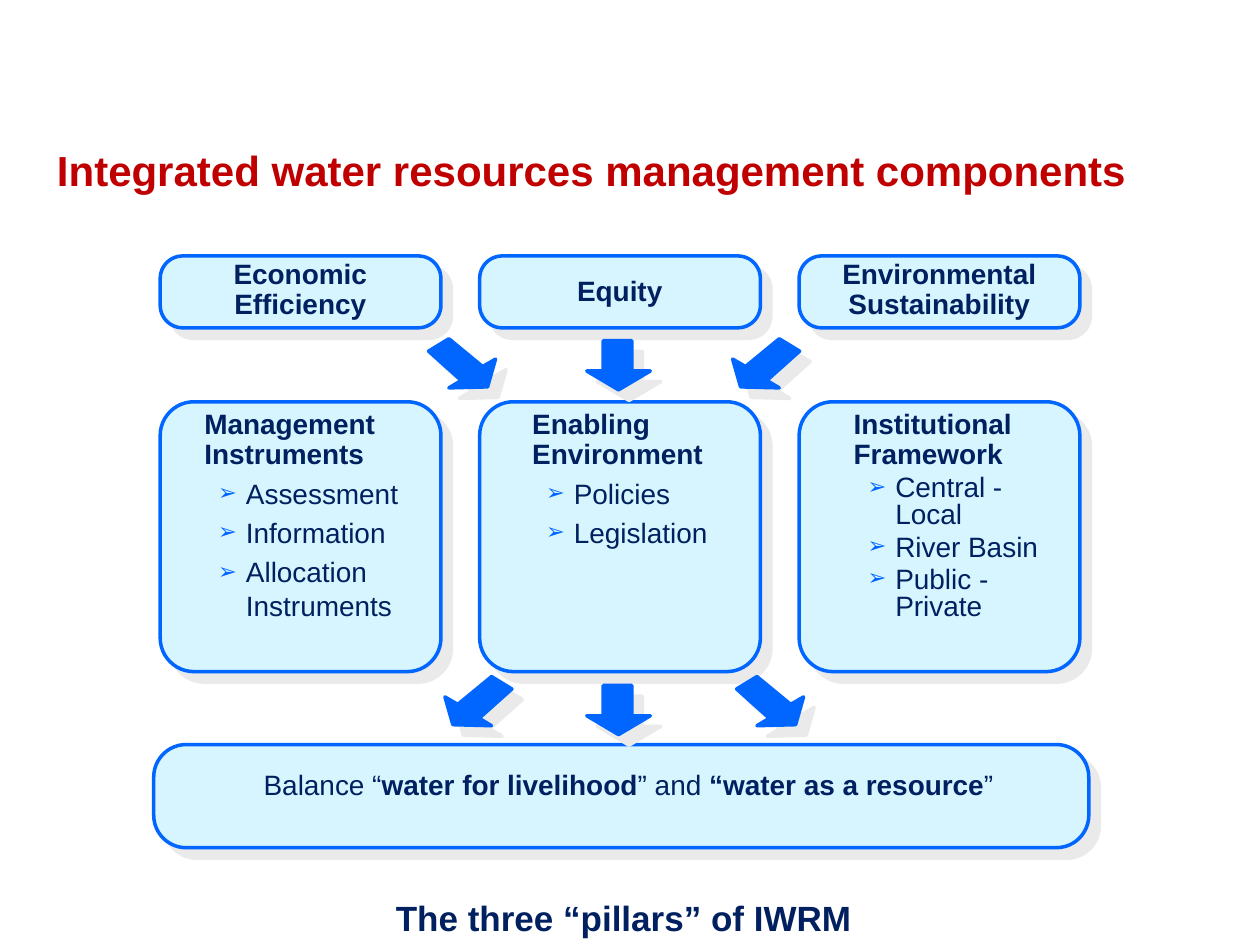
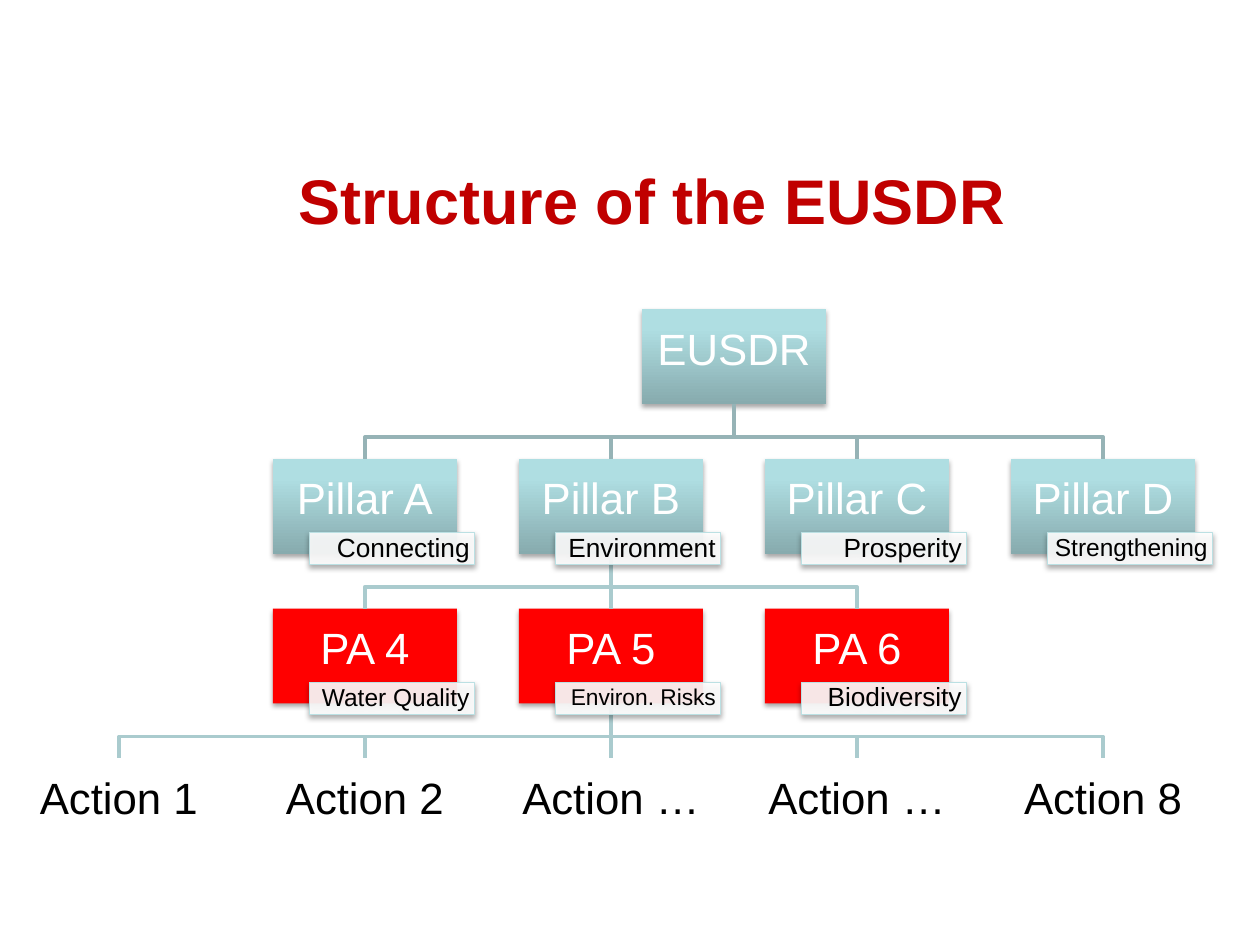
from dataclasses import dataclass

from copy import deepcopy
from lxml import etree
from pptx import Presentation
from pptx.dml.color import RGBColor
from pptx.enum import shapes, text as t
from pptx.oxml.ns import qn
from pptx.util import Cm, Pt


@dataclass(frozen=True)
class Theme:
    font: str = "Arial"
    title: str = "C00000"
    navy: str = "002060"
    blue: str = "0066FF"
    pale: str = "D7F5FF"
    white: str = "FFFFFF"
    black: str = "000000"
    red: str = "FF0000"
    teal_edge: str = "BBE0E3"
    branch_top: str = "96B3B6"
    branch_low: str = "AACBCE"
    teal: tuple = ((0, "87ABAE"), (0.8, "AFDEE2"), (1, "AFE0E4"))
    # colour, opacity %, blur pt, distance pt, direction in degrees
    grey_shadow: tuple = ("EAEAEA", 100, 0, 8.5, 45)
    soft_shadow: tuple = ("000000", 35, 3.1, 1.8, 90)
    body_size: int = 16
    closing_size: int = 20
    node_size: int = 25
    line_width: int = 2


THEME = Theme()
LEFT, CENTER, RIGHT = t.PP_ALIGN.LEFT, t.PP_ALIGN.CENTER, t.PP_ALIGN.RIGHT
TOP, MIDDLE = t.MSO_ANCHOR.TOP, t.MSO_ANCHOR.MIDDLE
RECT, ROUNDED = shapes.MSO_SHAPE.RECTANGLE, shapes.MSO_SHAPE.ROUNDED_RECTANGLE

DOWN_ARROW = [(0.64, 0.99), (0, 0.61), (0.33, 0.61), (0.33, 0),
              (0.91, 0), (0.91, 0.61), (1.28, 0.61)]
RIGHT_ARROW = [(1.19, 0.97), (1.35, 0.41), (1.09, 0.56), (0.41, 0),
               (0, 0.25), (0.66, 0.84), (0.41, 0.99)]
LEFT_ARROW = [(1.35 - x, y) for x, y in RIGHT_ARROW]


def write(para, content, size=THEME.body_size, color=THEME.navy, bold=False,
          align=LEFT, spacing=None, before=None, bullet=None):
    """Fill a paragraph from a string or from (text, bold) pairs."""
    para.alignment = align
    para.line_spacing = spacing
    if before is not None:
        para.space_before = Pt(before)
    if bullet:
        add_bullet(para, bullet)
    spans = [(content, bold)] if isinstance(content, str) else content
    for words, heavy in spans:
        for index, line in enumerate(words.split("\n")):
            if index:
                para.add_line_break()
                props = etree.SubElement(para._p[-1], qn("a:rPr"))
                props.set("sz", str(size * 100))
            span = para.add_run()
            span.text = line
            span.font.name = THEME.font
            span.font.size = Pt(size)
            span.font.bold = heavy
            span.font.color.rgb = RGBColor.from_string(color)


def add_bullet(para, mark):
    props = para._p.get_or_add_pPr()
    props.set("marL", str(Cm(0.84)))
    props.set("indent", str(-Cm(0.56)))
    tint = etree.SubElement(props, qn("a:buClr"))
    etree.SubElement(tint, qn("a:srgbClr")).set("val", THEME.blue)
    etree.SubElement(props, qn("a:buSzPct")).set("val", "80000")
    etree.SubElement(props, qn("a:buFont")).set("typeface", THEME.font)
    etree.SubElement(props, qn("a:buChar")).set("char", mark)


def set_frame(frame, insets, anchor, wrap):
    frame.word_wrap = wrap
    frame.vertical_anchor = anchor
    (frame.margin_left, frame.margin_top,
     frame.margin_right, frame.margin_bottom) = (Cm(inset) for inset in insets)


def set_shadow(shape, shadow):
    shape.shadow.inherit = False
    color, opacity, blur, distance, angle = shadow
    effects = shape._element.spPr.find(qn("a:effectLst"))
    outer = etree.SubElement(effects, qn("a:outerShdw"), blurRad=str(Pt(blur)),
                             dist=str(Pt(distance)), dir=str(angle * 60000),
                             algn="ctr", rotWithShape="0")
    tint = etree.SubElement(outer, qn("a:srgbClr"), val=color)
    etree.SubElement(tint, qn("a:alpha"), val=str(opacity * 1000))


def set_fill(shape, fill, opacity=100):
    """Fill with one colour, or upwards through (position, colour) stops."""
    if isinstance(fill, str):
        shape.fill.solid()
        shape.fill.fore_color.rgb = RGBColor.from_string(fill)
        if opacity < 100:
            tint = shape._element.spPr.find(qn("a:solidFill"))[0]
            etree.SubElement(tint, qn("a:alpha"), val=str(opacity * 1000))
        return
    shape.fill.gradient()
    shape.fill.gradient_angle = 90
    stop_list = shape._element.spPr.find(".//" + qn("a:gsLst"))
    while len(stop_list) < len(fill):
        stop_list.append(deepcopy(stop_list[0]))
    for stop, (position, color) in zip(shape.fill.gradient_stops, fill):
        stop.position = position
        stop.color.rgb = RGBColor.from_string(color)


def set_line(shape, color, width=THEME.line_width):
    if color is None:
        shape.line.fill.background()
        return
    shape.line.color.rgb = RGBColor.from_string(color)
    shape.line.width = Pt(width)


class Painter:
    """Draws on the current page; all lengths are centimetres."""

    def __init__(self):
        self.deck = Presentation()
        self.deck.slide_width, self.deck.slide_height = Cm(25.4), Cm(19.05)
        self.page = None

    def new_page(self):
        self.page = self.deck.slides.add_slide(self.deck.slide_layouts[6])

    def text_box(self, at, paragraphs, insets=(0.13, 0.05, 0.13, 0.05),
                 anchor=TOP, wrap=False):
        """Add text given as (content, format) pairs, one a paragraph."""
        box = self.page.shapes.add_textbox(*map(Cm, at))
        frame = box.text_frame
        set_frame(frame, insets, anchor, wrap)
        for index, (content, style) in enumerate(paragraphs):
            para = frame.add_paragraph() if index else frame.paragraphs[0]
            write(para, content, **style)
        return box

    def title(self, at, content, **style):
        style = dict(color=THEME.title, bold=True, **style)
        self.text_box(at, [(content, style)], (0.25, 0.13, 0.25, 0.13), MIDDLE, True)

    def shape(self, kind, at, fill, line, shadow, width=THEME.line_width, opacity=100):
        shape = self.page.shapes.add_shape(kind, *map(Cm, at))
        set_fill(shape, fill, opacity)
        set_line(shape, line, width)
        set_shadow(shape, shadow)
        return shape

    def panel(self, at, rounding):
        panel = self.shape(ROUNDED, at, THEME.pale, THEME.blue, THEME.grey_shadow)
        panel.adjustments[0] = rounding

    def outline(self, points, close):
        points = [(Cm(x), Cm(y)) for x, y in points]
        builder = self.page.shapes.build_freeform(*points[0], scale=1.0)
        builder.add_line_segments(points[1:], close=close)
        return builder.convert_to_shape()

    def block_arrow(self, left, top, points):
        arrow = self.outline([(left + x, top + y) for x, y in points], True)
        set_fill(arrow, THEME.blue)
        set_line(arrow, THEME.blue)
        set_shadow(arrow, THEME.grey_shadow)

    def branch(self, parent, child, color):
        """Join a parent's bottom to a child's top, with a bend if needed."""
        start = (parent.left + parent.width // 2, parent.top + parent.height)
        end = (child.left + child.width // 2, child.top)
        if start[0] == end[0]:
            link = self.page.shapes.add_connector(
                shapes.MSO_CONNECTOR.STRAIGHT, *start, *end)
            link.begin_connect(parent, 2)
            link.end_connect(child, 0)
            etree.SubElement(link._element.spPr, qn("a:effectLst"))
        else:
            (x1, y1), (x2, y2) = [(x / Cm(1), y / Cm(1)) for x, y in (start, end)]
            bend = y1 + 0.67
            link = self.outline([(x1, y1), (x1, bend), (x2, bend), (x2, y2)], False)
            link.fill.background()
            link.shadow.inherit = False
        set_line(link, color)


class Tree:
    """Organisation chart on a grid of columns and levels."""
    LEFT, TOP, COLUMN, LEVEL, WIDTH, HEIGHT = 0.54, 6.23, 4.96, 3.02, 3.71, 1.91
    INSETS = (0.05, 0.05, 0.05, 0.27)

    def __init__(self, painter):
        self.painter = painter

    def place(self, column, level):
        return self.LEFT + column * self.COLUMN, self.TOP + level * self.LEVEL

    def node(self, column, level, label, fill=None):
        at = (*self.place(column, level), self.WIDTH, self.HEIGHT)
        style = dict(size=THEME.node_size, align=CENTER, spacing=0.9)
        if fill is None:
            return self.painter.text_box(
                at, [(label, dict(style, color=THEME.black))], self.INSETS, MIDDLE, True)
        node = self.painter.shape(RECT, at, fill, None, THEME.soft_shadow)
        set_frame(node.text_frame, self.INSETS, MIDDLE, True)
        write(node.text_frame.paragraphs[0], label, color=THEME.white, **style)
        return node

    def tag(self, column, level, label, size):
        left, top = self.place(column, level)
        tag = self.painter.shape(RECT, (left + 0.74, top + 1.49, 3.33, 0.64), THEME.white,
                                 THEME.teal_edge, THEME.soft_shadow, 0.75, 90)
        set_frame(tag.text_frame, (0.1, 0.03, 0.1, 0.03), MIDDLE, True)
        write(tag.text_frame.paragraphs[0], label, size=size, color=THEME.black,
              align=RIGHT, spacing=0.9)


def components_page(painter):
    painter.new_page()
    left, pitch, width = 3.23, 6.44, 5.66
    goals = [("Economic\nEfficiency", 5.2), ("Equity", 5.54),
             ("Environmental\nSustainability", 5.2)]
    # heading, items, left inset of the text, line spacing of the items
    pillars = [
        ("Management\nInstruments",
         ["Assessment", "Information", "Allocation\nInstruments"], 0.62, None),
        ("Enabling\nEnvironment", ["Policies", "Legislation"], 0.79, None),
        ("Institutional\nFramework",
         ["Central -\nLocal", "River Basin", "Public -\nPrivate"], 0.83, 0.8),
    ]
    heading = dict(bold=True, spacing=0.9)
    for column, (goal, pillar) in enumerate(zip(goals, pillars)):
        x = left + column * pitch
        painter.panel((x, 8.1, width, 5.44), 0.125)
        painter.panel((x, 5.16, width, 1.45), 0.314)
        name, top = goal
        painter.text_box((x + 0.27, top, 5.11, 1.4),
                         [(name, dict(heading, align=CENTER))])
        name, items, inset, spacing = pillar
        item_style = dict(bullet="➢", before=3.2, spacing=spacing)
        painter.text_box((x + 0.27, 8.22, 5.11, 1.85),
                         [(name, heading)] + [(item, item_style) for item in items],
                         (inset, 0.05, 0.13, 0.05))
    painter.panel((3.1, 15.01, 18.85, 2.08), 0.314)
    for x, y, points in [(8.64, 6.83, RIGHT_ARROW), (11.83, 6.87, DOWN_ARROW),
                         (14.77, 6.83, LEFT_ARROW), (8.97, 13.64, LEFT_ARROW),
                         (11.83, 13.82, DOWN_ARROW), (14.85, 13.64, RIGHT_ARROW)]:
        painter.block_arrow(x, y, points)
    balance = [("Balance “", False), ("water for livelihood", True), ("” and ", False),
               ("“water as a resource", True), ("”", False)]
    painter.text_box((4.49, 15.42, 16.36, 0.84), [(balance, dict(align=CENTER))])
    painter.text_box((5.78, 17.94, 13.59, 1.12),
                     [("The three “pillars” of IWRM",
                       dict(size=THEME.closing_size, bold=True, align=CENTER))],
                     (0.25, 0.13, 0.25, 0.13), wrap=True)
    painter.title((0.9, 2.72, 22.86, 1.4),
                  "Integrated water resources management components", size=24)


def structure_page(painter):
    painter.new_page()
    painter.title((1.71, 2.53, 22.86, 3.18), "Structure of the EUSDR",
                  size=36, align=CENTER, spacing=0.9)
    tree = Tree(painter)
    pillars = [("Pillar A", "Connecting", 15), ("Pillar B", "Environment", 15),
               ("Pillar C", "Prosperity", 15), ("Pillar D", "Strengthening", 14)]
    areas = [("PA 4", "Water Quality", 14), ("PA 5", "Environ. Risks", 13),
             ("PA 6", "Biodiversity", 15)]
    actions = ["Action 1", "Action 2", "Action …", "Action …", "Action 8"]

    root = tree.node(2.5, 0, "EUSDR", THEME.teal)
    pillar_nodes = [tree.node(column, 1, label, THEME.teal)
                    for column, (label, _, _) in enumerate(pillars, 1)]
    area_nodes = [tree.node(column, 2, label, THEME.red)
                  for column, (label, _, _) in enumerate(areas, 1)]
    action_nodes = [tree.node(column, 3, label) for column, label in enumerate(actions)]

    for parent, children, color in [(root, pillar_nodes, THEME.branch_top),
                                    (pillar_nodes[1], area_nodes, THEME.branch_low),
                                    (area_nodes[1], action_nodes, THEME.branch_low)]:
        for child in children:
            painter.branch(parent, child, color)
    for level, row in enumerate((pillars, areas), 1):
        for column, (_, label, size) in enumerate(row, 1):
            tree.tag(column, level, label, size)


def main():
    painter = Painter()
    components_page(painter)
    structure_page(painter)
    painter.deck.save("out.pptx")


if __name__ == "__main__":
    main()
